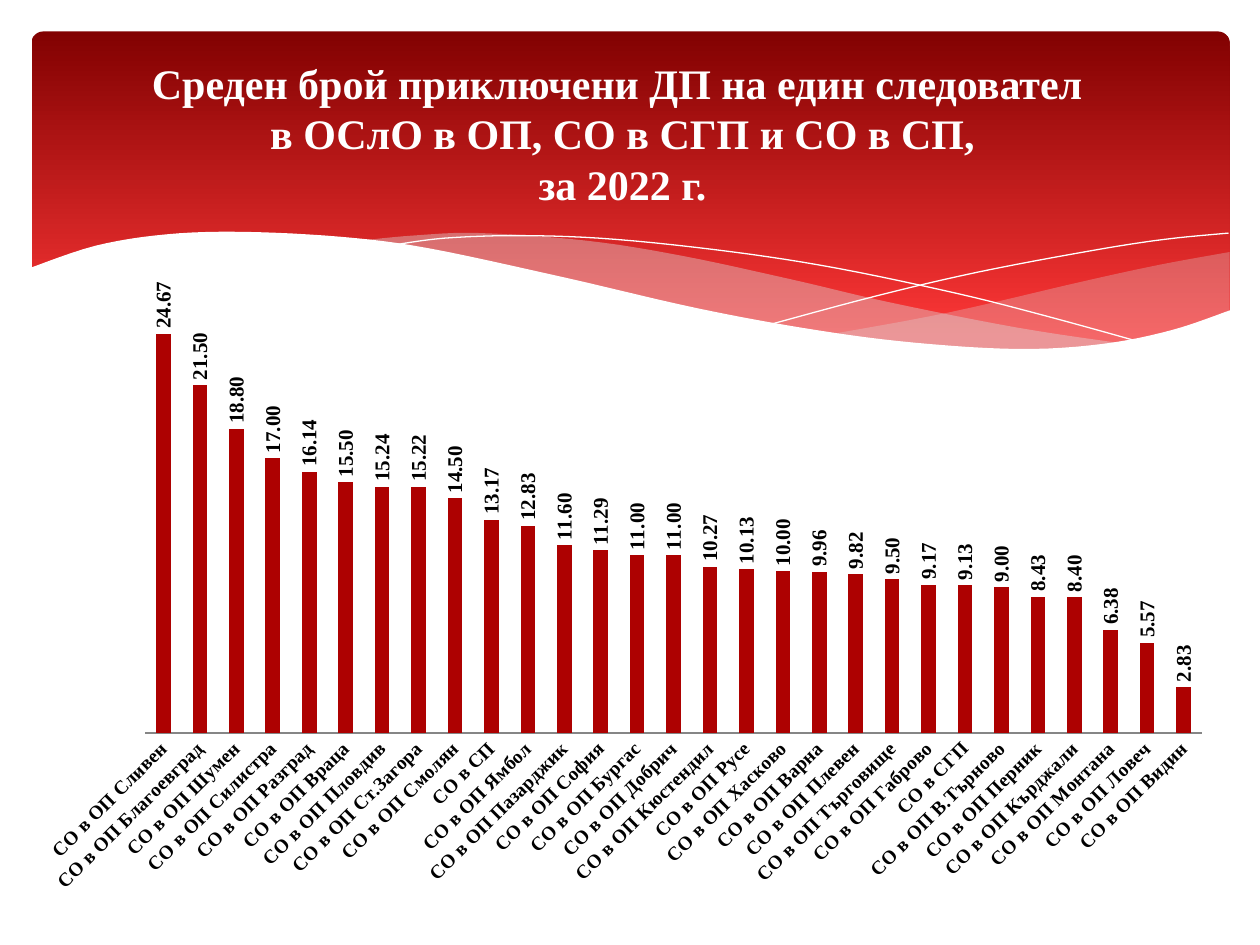
from dataclasses import dataclass

import pptx
import pptx.chart.data
import pptx.dml.color
import pptx.enum.chart
import pptx.enum.dml
import pptx.enum.shapes
import pptx.enum.text
import pptx.oxml
import pptx.oxml.ns
import pptx.util
from lxml import etree

A_NS = "http://schemas.openxmlformats.org/drawingml/2006/main"


@dataclass
class Theme:
    white: str = "FFFFFF"
    black: str = "000000"
    dark_red: str = "820101"
    bright_red: str = "FE3737"
    bar: str = "AD0101"
    mist: str = "DEDEE0"
    axis: str = "868686"
    font: str = "Times New Roman"
    title_size: int = 24
    label_size: int = 12
    axis_size: int = 11


def rgb(code):
    return pptx.dml.color.RGBColor.from_string(code)


def smooth(points, steps=6):
    """Catmull-Rom curve through the points."""
    padded = [points[0], *points, points[-1]]
    curve = [points[0]]
    for a, b, c, d in zip(padded, padded[1:], padded[2:], padded[3:]):
        for i in range(1, steps + 1):
            t = i / steps
            curve.append(tuple(
                (2 * q + (r - p) * t + (2 * p - 5 * q + 4 * r - s) * t ** 2
                 + (3 * q - p - 3 * r + s) * t ** 3) / 2
                for p, q, r, s in zip(a, b, c, d)))
    return curve


class Deck:
    """Places elements on a grid of 10 columns by 7.5 rows."""

    COLS, ROWS = 10, 7.5

    def __init__(self, theme):
        self.theme = theme
        self.prs = pptx.Presentation()
        self.prs.slide_width = pptx.util.Inches(10)
        self.prs.slide_height = pptx.util.Inches(7.5)
        self.s = self.prs.slides.add_slide(self.prs.slide_layouts[6])

    def x(self, cols):
        return round(self.prs.slide_width * cols / self.COLS)

    def y(self, rows):
        return round(self.prs.slide_height * rows / self.ROWS)

    def box(self, left, top, width, height):
        return self.x(left), self.y(top), self.x(width), self.y(height)

    def font(self, font, size, color):
        font.name, font.size, font.bold = self.theme.font, pptx.util.Pt(size), True
        font.color.rgb = rgb(color)

    def banner(self, *place):
        sp = self.s.shapes.add_shape(
            pptx.enum.shapes.MSO_SHAPE.ROUNDED_RECTANGLE, *self.box(*place))
        sp.adjustments[0] = 0.034
        sp.shadow.inherit = False
        sp.line.fill.background()
        sp.fill.gradient()
        sp.fill.gradient_angle = 270
        stops = zip(sp.fill.gradient_stops, (0, 0.9),
                    (self.theme.dark_red, self.theme.bright_red))
        for stop, position, color in stops:
            stop.position, stop.color.rgb = position, rgb(color)

    def curve(self, *edges, closed):
        points = [(self.x(x), self.y(y)) for e in edges for x, y in smooth(e)]
        fb = self.s.shapes.build_freeform(*points[0])
        fb.add_line_segments(points[1:], close=closed)
        sp = fb.convert_to_shape()
        sp.shadow.inherit = False
        return sp

    def wave(self, *edges, color, alpha=100):
        sp = self.curve(*edges, closed=True)
        sp.line.fill.background()
        sp.fill.solid()
        sp.fill.fore_color.rgb = rgb(color)
        clr = sp.fill._xPr.find(".//" + pptx.oxml.ns.qn("a:srgbClr"))
        etree.SubElement(clr, pptx.oxml.ns.qn("a:alpha"), val=str(alpha * 1000))

    def thread(self, points):
        sp = self.curve(points, closed=False)
        sp.fill.background()
        sp.line.color.rgb = rgb(self.theme.white)
        sp.line.width = 0

    def chart(self, data, *place):
        cd = pptx.chart.data.CategoryChartData(number_format="0.00")
        cd.categories = list(data)
        cd.add_series("Series 1", data.values())
        enum = pptx.enum.chart
        chart = self.s.shapes.add_chart(
            enum.XL_CHART_TYPE.COLUMN_CLUSTERED, *self.box(*place), cd).chart
        chart.has_legend = chart.has_title = False
        self.font(chart.font, self.theme.axis_size, self.theme.black)

        # Bars and their upright values
        plot = chart.plots[0]
        plot.vary_by_categories = False
        plot.gap_width, plot.overlap = 150, -25
        fill = plot.series[0].format.fill
        fill.solid()
        fill.fore_color.rgb = rgb(self.theme.bar)
        plot.has_data_labels = True
        labels = plot.data_labels
        labels.show_value = True
        labels.number_format, labels.number_format_is_linked = "0.00", False
        labels.position = enum.XL_LABEL_POSITION.OUTSIDE_END
        self.font(labels.font, self.theme.label_size, self.theme.black)
        self.turn(labels, -90)

        # Axes
        val, cat = chart.value_axis, chart.category_axis
        val.visible = val.has_major_gridlines = False
        val.minimum_scale, val.maximum_scale = 0, 30
        cat.major_tick_mark = enum.XL_TICK_MARK.NONE
        cat.format.line.color.rgb = rgb(self.theme.axis)
        self.font(cat.tick_labels.font, self.theme.axis_size, self.theme.black)
        self.turn(cat, -45)

        # Plot area as shares of the chart
        area = chart._chartSpace.chart.plotArea
        for old in area.findall(pptx.oxml.ns.qn("c:layout")):
            area.remove(old)
        sizes = {"x": 0.1, "y": 0.02, "w": 0.88, "h": 0.72}
        parts = '<c:layoutTarget val="inner"/><c:xMode val="edge"/><c:yMode val="edge"/>'
        parts += "".join(f'<c:{k} val="{v}"/>' for k, v in sizes.items())
        area.insert(0, pptx.oxml.parse_xml(
            f'<c:layout {pptx.oxml.ns.nsdecls("c")}><c:manualLayout>{parts}'
            "</c:manualLayout></c:layout>"))

    @staticmethod
    def turn(part, degrees):
        body = part._element.find(".//" + pptx.oxml.ns.qn("a:bodyPr"))
        body.set("rot", str(degrees * 60000))
        body.set("vert", "horz")

    def title(self, text, *place):
        tf = self.s.shapes.add_textbox(*self.box(*place)).text_frame
        tf.word_wrap = True
        tf.vertical_anchor = pptx.enum.text.MSO_ANCHOR.MIDDLE
        p = tf.paragraphs[0]
        p.text = text
        p.alignment = pptx.enum.text.PP_ALIGN.CENTER
        self.font(p.font, self.theme.title_size, self.theme.white)
        for r in p.runs:
            r._r.get_or_add_rPr().append(pptx.oxml.parse_xml(
                f'<a:effectLst xmlns:a="{A_NS}"><a:outerShdw blurRad="130000" '
                'dist="300000" dir="2700000"><a:srgbClr val="000000">'
                '<a:alpha val="40000"/></a:srgbClr></a:outerShdw></a:effectLst>'))


VALUES = {
    "СО в ОП Сливен": 24.67, "СО в ОП Благоевград": 21.5, "СО в ОП Шумен": 18.8,
    "СО в ОП Силистра": 17, "СО в ОП Разград": 16.14, "СО в ОП Враца": 15.5,
    "СО в ОП Пловдив": 15.24, "СО в ОП Ст.Загора": 15.22, "СО в ОП Смолян": 14.5,
    "СО в СП": 13.17, "СО в ОП Ямбол": 12.83, "СО в ОП Пазарджик": 11.6,
    "СО в ОП София": 11.29, "СО в ОП Бургас": 11, "СО в ОП Добрич": 11,
    "СО в ОП Кюстендил": 10.27, "СО в ОП Русе": 10.13, "СО в ОП Хасково": 10,
    "СО в ОП Варна": 9.96, "СО в ОП Плевен": 9.82, "СО в ОП Търговище": 9.5,
    "СО в ОП Габрово": 9.17, "СО в СГП": 9.13, "СО в ОП В.Търново": 9,
    "СО в ОП Перник": 8.43, "СО в ОП Кърджали": 8.4, "СО в ОП Монтана": 6.38,
    "СО в ОП Ловеч": 5.57, "СО в ОП Видин": 2.83,
}


def main():
    theme = Theme()
    deck = Deck(theme)

    # Red banner with its waves
    deck.banner(0.25, 0.25, 9.51, 2.7)
    deck.wave([(9.76, 2), (9.21, 2.1), (8.61, 2.23), (7.53, 2.48), (6.61, 2.65)],
              [(6.61, 2.65), (7.32, 2.74), (8.03, 2.78), (8.72, 2.74), (9.28, 2.63), (9.76, 2.47)],
              color=theme.mist, alpha=29)
    deck.wave([(8.93, 2.73), (8.07, 2.6), (7.06, 2.4), (6.29, 2.22), (5.41, 2.03),
               (4.65, 1.91), (3.8, 1.85), (3.28, 1.87), (2.86, 1.91)],
              [(2.86, 1.91), (3.62, 2.03), (4.49, 2.22), (5.66, 2.48), (6.65, 2.66),
               (7.48, 2.76), (8.18, 2.78), (8.93, 2.73)],
              color=theme.mist, alpha=40)
    deck.thread([(3.09, 1.95), (3.53, 1.89), (4.16, 1.87), (4.89, 1.9), (5.82, 2),
                 (6.65, 2.13), (7.6, 2.33), (8.31, 2.51), (9.07, 2.72)])
    deck.thread([(6.13, 2.57), (6.95, 2.35), (7.76, 2.16), (8.66, 1.99), (9.24, 1.9), (9.75, 1.85)])
    deck.wave([(9.77, 2.46), (9.3, 2.62), (8.75, 2.73), (8.09, 2.77), (7.26, 2.72),
               (6.48, 2.62), (5.55, 2.45), (4.47, 2.2), (3.4, 1.97), (2.71, 1.88),
               (1.93, 1.84), (1.32, 1.86), (0.76, 1.95), (0.23, 2.13)],
              [(0.23, 3.29), (9.77, 3.29)], color=theme.white)

    # Chart and title
    deck.chart(VALUES, 0.2, 1.86, 9.53, 5.35)
    deck.title("Среден брой приключени ДП на един следовател \v"
               "в ОСлО в ОП, СО в СГП и СО в СП,\vза 2022 г.", 0, 0.37, 9.88, 1.37)

    deck.prs.save("out.pptx")


if __name__ == "__main__":
    main()
